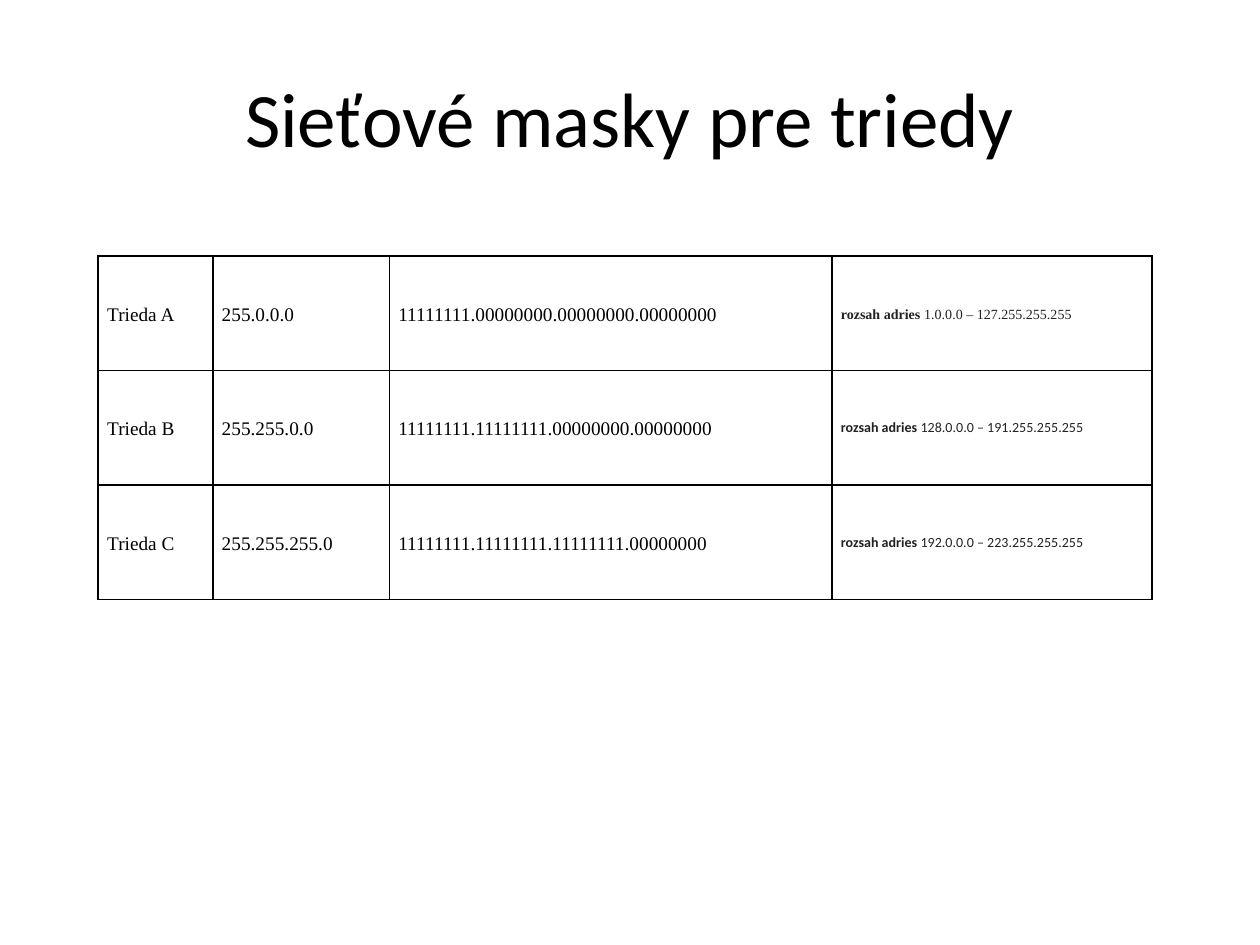
from lxml.etree import SubElement as Sub
from pptx import Presentation
from pptx.dml.color import RGBColor as Rgb
from pptx.enum.text import MSO_ANCHOR as Anchor, PP_ALIGN as Align
from pptx.oxml.ns import qn
from pptx.util import Cm, Pt

COLORS = {"text": "000000", "range": "222222", "line": "000000", "page": "FFFFFF"}
SANS, SERIF = "Calibri", "Times New Roman"
COLS = [2.31, 3.56, 8.92, 6.45]
ROW = 2.31

# Class, mask, binary mask, range label, range, range font
ROWS = [
    ("Trieda A", "255.0.0.0", "11111111.00000000.00000000.00000000",
     "rozsah adries", " 1.0.0.0 – 127.255.255.255", SERIF),
    ("Trieda B", "255.255.0.0", "11111111.11111111.00000000.00000000",
     "rozsah adries", " 128.0.0.0 – 191.255.255.255", SANS),
    ("Trieda C", "255.255.255.0", "11111111.11111111.11111111.00000000",
     "rozsah adries ", "192.0.0.0 – 223.255.255.255", SANS),
]


def add_run(para, text, size, font, color="text", bold=False):
    run = para.add_run()
    run.text = text
    run.font.size = Pt(size)
    run.font.name = font
    run.font.bold = bold
    run.font.color.rgb = Rgb.from_string(COLORS[color])


def add_title(slide, text):
    title = slide.shapes.title
    title.left, title.top = Cm(1.27), Cm(0.76)
    title.width, title.height = Cm(22.86), Cm(3.18)
    frame = title.text_frame
    frame.vertical_anchor = Anchor.MIDDLE
    para = frame.paragraphs[0]
    para.alignment = Align.CENTER
    add_run(para, text, 44, SANS)


def set_cell(cell):
    cell.vertical_anchor = Anchor.MIDDLE
    cell.margin_left = cell.margin_right = Cm(0.18)
    cell.margin_top = cell.margin_bottom = 0
    # Borders come before the fill in the cell properties
    props = cell._tc.get_or_add_tcPr()
    for side in ("lnL", "lnR", "lnT", "lnB"):
        line = Sub(props, qn(f"a:{side}"), w=str(Pt(1)))
        fill = Sub(line, qn("a:solidFill"))
        Sub(fill, qn("a:srgbClr"), val=COLORS["line"])
    cell.fill.background()


def add_range(para, label, span, font):
    if font == SANS:
        para.space_before = para.space_after = Pt(6)
    else:
        para.line_spacing = 1.15
    add_run(para, label, 8, font, "range", True)
    add_run(para, span, 8, font, "range")


def add_masks(slide):
    frame = slide.shapes.add_table(
        len(ROWS), len(COLS), Cm(1.98), Cm(5.16),
        Cm(sum(COLS)), Cm(ROW * len(ROWS)))
    table = frame.table
    table.first_row = table.horz_banding = False
    for col, width in zip(table.columns, COLS):
        col.width = Cm(width)
    for row, (*texts, label, span, font) in zip(table.rows, ROWS):
        row.height = Cm(ROW)
        for cell in row.cells:
            set_cell(cell)
        *cells, last = row.cells
        for cell, text in zip(cells, texts):
            para = cell.text_frame.paragraphs[0]
            para.line_spacing = 1.15
            add_run(para, text, 11, SERIF)
        add_range(last.text_frame.paragraphs[0], label, span, font)


def main():
    deck = Presentation()
    deck.slide_width, deck.slide_height = Cm(25.4), Cm(19.05)
    slide = deck.slides.add_slide(deck.slide_layouts[5])  # title only
    back = slide.background.fill
    back.solid()
    back.fore_color.rgb = Rgb.from_string(COLORS["page"])
    add_title(slide, "Sieťové masky pre triedy")
    add_masks(slide)
    deck.save("out.pptx")


if __name__ == "__main__":
    main()
